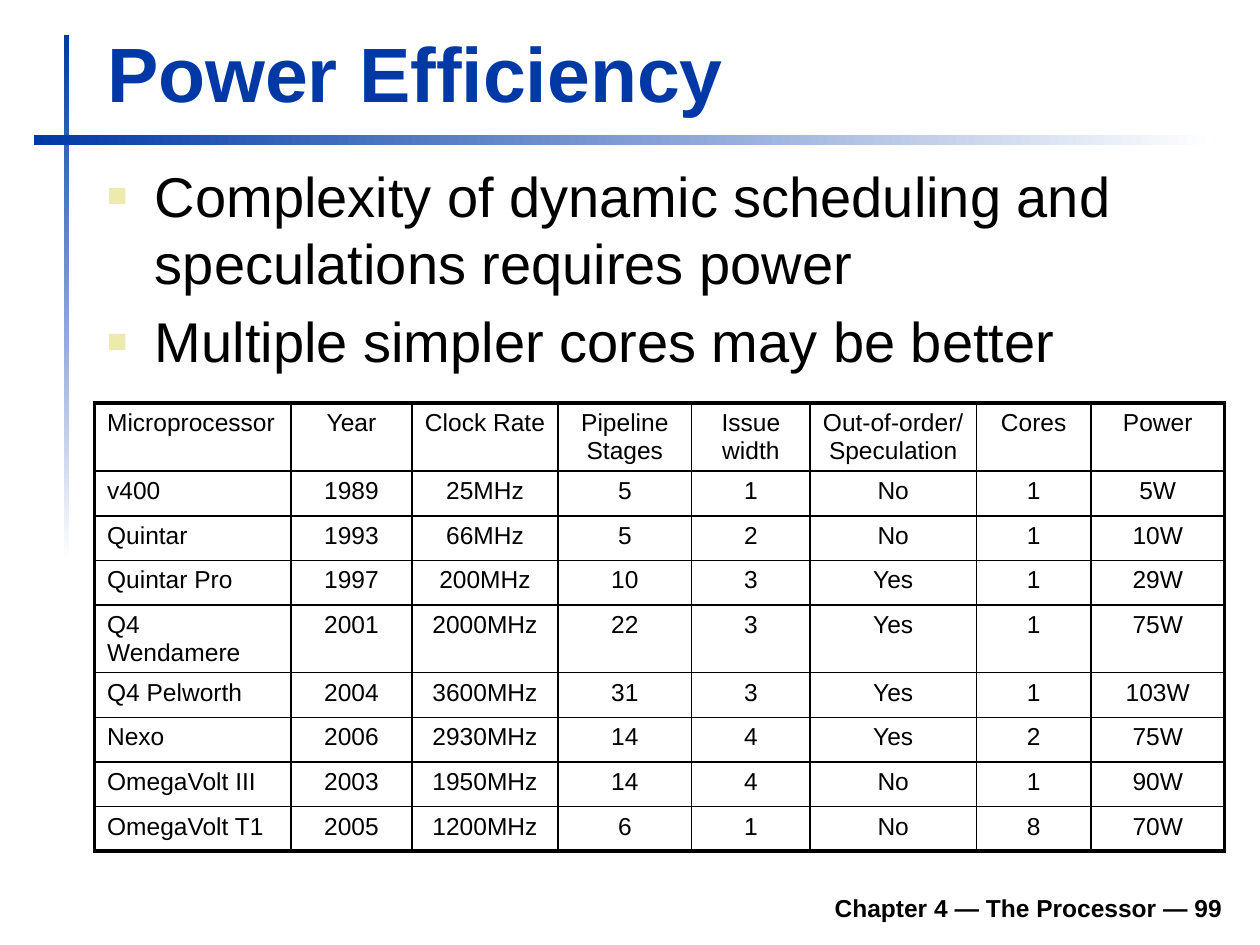
from dataclasses import dataclass

from lxml import etree
from pptx import Presentation
from pptx.dml.color import RGBColor
from pptx.enum import shapes, text
from pptx.oxml import ns
from pptx.util import Inches, Pt


@dataclass(frozen=True)
class Theme:
    font: str = "Arial"
    ink: str = "000000"
    blue: str = "0039A6"
    paper: str = "FFFFFF"
    bullet: str = "ECEAAC"
    title: int = 44
    body: int = 32
    small: int = 14
    thin: float = 1
    rule: float = 1.5
    edge: float = 2.25


THEME = Theme()
ALIGN = text.PP_ALIGN

POINTS = [
    "Complexity of dynamic scheduling and speculations requires power",
    "Multiple simpler cores may be better",
]
COLS = [1.56, 0.96, 1.16, 1.06, 0.94, 1.32, 0.91, 1.06]
ROWS = [
    ["Microprocessor", "Year", "Clock Rate", "Pipeline Stages",
     "Issue width", "Out-of-order/ Speculation", "Cores", "Power"],
    ["v400", "1989", "25MHz", "5", "1", "No", "1", "5W"],
    ["Quintar", "1993", "66MHz", "5", "2", "No", "1", "10W"],
    ["Quintar Pro", "1997", "200MHz", "10", "3", "Yes", "1", "29W"],
    ["Q4 Wendamere", "2001", "2000MHz", "22", "3", "Yes", "1", "75W"],
    ["Q4 Pelworth", "2004", "3600MHz", "31", "3", "Yes", "1", "103W"],
    ["Nexo", "2006", "2930MHz", "14", "4", "Yes", "2", "75W"],
    ["OmegaVolt III", "2003", "1950MHz", "14", "4", "No", "1", "90W"],
    ["OmegaVolt T1", "2005", "1200MHz", "6", "1", "No", "8", "70W"],
]
HEAD_H, ROW_H = 0.54, 0.354
RULED = (1, 7)  # rows that start below a heavier line


def place(shape, box):
    shape.left, shape.top, shape.width, shape.height = map(Inches, box)


def style(par, size, color=THEME.ink, bold=False, align=ALIGN.LEFT):
    par.alignment = align
    for run in par.runs:
        run.font.name = THEME.font
        run.font.size = Pt(size)
        run.font.bold = bold
        run.font.color.rgb = RGBColor.from_string(color)


def frame(shape, anchor):
    area = shape.text_frame
    area.word_wrap = True
    area.auto_size = text.MSO_AUTO_SIZE.NONE
    area.vertical_anchor = anchor
    return area


def add_bar(slide, box, angle):
    bar = slide.shapes.add_shape(shapes.MSO_SHAPE.RECTANGLE, *map(Inches, box))
    bar.shadow.inherit = False
    bar.line.fill.background()
    bar.fill.gradient()
    bar.fill.gradient_angle = angle
    for stop, color, pos in zip(bar.fill.gradient_stops,
                                (THEME.blue, THEME.paper), (0, 1)):
        stop.color.rgb = RGBColor.from_string(color)
        stop.position = pos


def add_title(slide, box):
    title = slide.shapes.title
    place(title, box)
    area = frame(title, text.MSO_ANCHOR.BOTTOM)
    area.text = "Power Efficiency"
    style(area.paragraphs[0], THEME.title, THEME.blue, bold=True)


def add_bullet(par):
    props = par._p.get_or_add_pPr()
    props.set("marL", str(Inches(0.38)))
    props.set("indent", str(-Inches(0.38)))
    color = etree.SubElement(props, ns.qn("a:buClr"))
    etree.SubElement(color, ns.qn("a:srgbClr"), val=THEME.bullet)
    etree.SubElement(props, ns.qn("a:buSzPct"), val="60000")
    etree.SubElement(props, ns.qn("a:buFont"), typeface=THEME.font)
    etree.SubElement(props, ns.qn("a:buChar"), char="■")


def add_list(slide, box):
    body = slide.placeholders[1]
    place(body, box)
    area = frame(body, text.MSO_ANCHOR.TOP)
    area.text = "\n".join(POINTS)
    for i, par in enumerate(area.paragraphs):
        add_bullet(par)
        par.space_before = Pt(0.2 * THEME.body if i else 0)
        style(par, THEME.body)


def set_edges(cell, widths):
    props = cell._tc.get_or_add_tcPr()
    for i, (side, width) in enumerate(zip("LRTB", widths)):
        line = etree.Element(ns.qn(f"a:ln{side}"), w=str(Pt(width)))
        fill = etree.SubElement(line, ns.qn("a:solidFill"))
        etree.SubElement(fill, ns.qn("a:srgbClr"), val=THEME.ink)
        props.insert(i, line)


def line_width(i, count, ruled=()):
    if i in (0, count):
        return THEME.edge
    return THEME.rule if i in ruled else THEME.thin


def add_grid(slide, box):
    rows, cols = len(ROWS), len(COLS)
    table = slide.shapes.add_table(rows, cols, *map(Inches, box)).table
    table.first_row = table.horz_banding = False
    for col, width in zip(table.columns, COLS):
        col.width = Inches(width)
    for r, words in enumerate(ROWS):
        table.rows[r].height = Inches(ROW_H if r else HEAD_H)
        for c, word in enumerate(words):
            cell = table.cell(r, c)
            cell.fill.background()
            cell.text_frame.text = word
            style(cell.text_frame.paragraphs[0], THEME.small,
                  align=ALIGN.CENTER if c else ALIGN.LEFT)
            set_edges(cell, [line_width(c, cols), line_width(c + 1, cols),
                             line_width(r, rows, RULED),
                             line_width(r + 1, rows, RULED)])


def add_footer(slide, box):
    note = slide.shapes.add_textbox(*map(Inches, box))
    area = frame(note, text.MSO_ANCHOR.BOTTOM)
    area.text = "Chapter 4 — The Processor — 99"
    style(area.paragraphs[0], THEME.small, bold=True, align=ALIGN.RIGHT)


def main():
    deck = Presentation()
    deck.slide_width, deck.slide_height = Inches(10), Inches(7.5)
    slide = deck.slides.add_slide(deck.slide_layouts[1])
    # Crossed gradient bars
    add_bar(slide, (0.51, 0.28, 0.04, 4.17), 270)
    add_bar(slide, (0.27, 1.07, 9.37, 0.08), 0)
    # Heading and points
    add_title(slide, (0.75, 0.16, 9.03, 0.83))
    add_list(slide, (0.75, 1.23, 9.05, 1.89))
    # Processor table and footer
    add_grid(slide, (0.75, 3.2, sum(COLS), HEAD_H + ROW_H * (len(ROWS) - 1)))
    add_footer(slide, (1.85, 6.98, 7.95, 0.39))
    deck.save("out.pptx")


if __name__ == "__main__":
    main()
